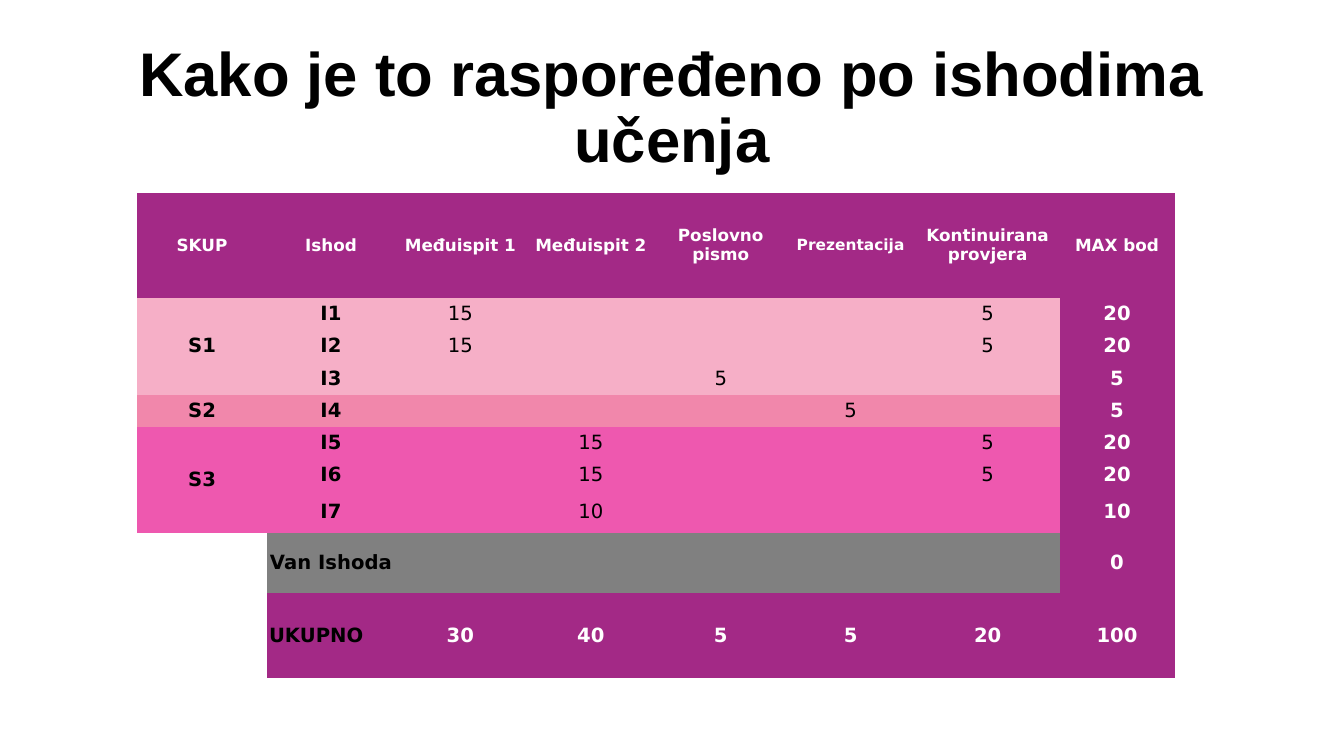
from dataclasses import dataclass

from lxml.etree import SubElement
from pptx import Presentation
from pptx.dml.color import RGBColor
from pptx.enum.text import MSO_ANCHOR as Anchor, PP_ALIGN as Align
from pptx.oxml.ns import qn
from pptx.util import Inches, Pt

NO_STYLE_NO_GRID = "{2D5ABB26-0587-4C30-8999-92F81FD0307C}"


@dataclass(frozen=True)
class Theme:
    title_font: str = "Arial"
    table_font: str = "DejaVu Sans"
    dark: str = "000000"
    light: str = "FFFFFF"
    purple: str = "A32986"
    gray: str = "808080"
    title_size: int = 44
    body_size: int = 14
    header_size: int = 12
    small_size: int = 11


HEADERS = ["SKUP", "Ishod", "Međuispit 1", "Međuispit 2", "Poslovno pismo",
           "Prezentacija", "Kontinuirana provjera", "MAX bod"]
# Each set: name, fill, and its outcomes with points per kind of assessment
OUTCOME_SETS = [
    ("S1", "F6AFC7", [("I1", [15, 0, 0, 0, 5]),
                      ("I2", [15, 0, 0, 0, 5]),
                      ("I3", [0, 0, 5, 0, 0])]),
    ("S2", "F187AB", [("I4", [0, 0, 0, 5, 0])]),
    ("S3", "EE58AF", [("I5", [0, 15, 0, 0, 5]),
                      ("I6", [0, 15, 0, 0, 5]),
                      ("I7", [0, 10, 0, 0, 0])]),
]
COLUMN_WEIGHTS = [1.29, 1.27, 1.3, 1.29, 1.29, 1.29, 1.43, 1.14]
ROW_WEIGHTS = [1.04] + [0.32] * 6 + [0.41, 0.6, 0.84]


def write(frame, text, *, font, size, color, bold=True, align=Align.CENTER,
          line_spacing=None):
    paragraph = frame.paragraphs[0]
    paragraph.alignment = align
    paragraph.line_spacing = line_spacing
    if not text:
        # An empty cell keeps its row low only with an explicit size
        SubElement(paragraph._p, qn("a:endParaRPr"), sz=str(size * 100))
        return
    run = paragraph.add_run()
    run.text = text
    run.font.name = font
    run.font.size = Pt(size)
    run.font.bold = bold
    run.font.color.rgb = RGBColor.from_string(color)


class SlideBuilder:
    """Places elements by shares of the slide's width and height."""

    def __init__(self, presentation, theme):
        self.theme = theme
        self.width = presentation.slide_width
        self.height = presentation.slide_height
        self.slide = presentation.slides.add_slide(presentation.slide_layouts[5])

    def box(self, left, top, width, height):
        return (round(left * self.width), round(top * self.height),
                round(width * self.width), round(height * self.height))

    def title(self, text, *place):
        shape = self.slide.shapes.title
        shape.left, shape.top, shape.width, shape.height = self.box(*place)
        shape.text_frame.word_wrap = True
        shape.text_frame.vertical_anchor = Anchor.MIDDLE
        write(shape.text_frame, text, font=self.theme.title_font,
              size=self.theme.title_size, color=self.theme.dark, line_spacing=0.9)

    def table(self, column_weights, row_weights, *place):
        left, top, width, height = self.box(*place)
        table = self.slide.shapes.add_table(
            len(row_weights), len(column_weights), left, top, width, height).table
        table.first_row = table.horz_banding = False
        table._tbl.tblPr.find(qn("a:tableStyleId")).text = NO_STYLE_NO_GRID
        for column, weight in zip(table.columns, column_weights):
            column.width = round(width * weight / sum(column_weights))
        for row, weight in zip(table.rows, row_weights):
            row.height = round(height * weight / sum(row_weights))
        return table

    def cell(self, cell, text, fill, **text_format):
        cell.fill.solid()
        cell.fill.fore_color.rgb = RGBColor.from_string(fill)
        cell.vertical_anchor = Anchor.MIDDLE
        cell.margin_left = cell.margin_right = Inches(0.02)
        cell.margin_top = cell.margin_bottom = Inches(0.02)
        defaults = {"font": self.theme.table_font, "size": self.theme.body_size,
                    "color": self.theme.dark}
        write(cell.text_frame, text, **(defaults | text_format))


def fill_points_table(builder, table):
    theme = builder.theme
    light = {"color": theme.light}

    for column, header in enumerate(HEADERS):
        size = theme.small_size if header == "Prezentacija" else theme.header_size
        builder.cell(table.cell(0, column), header, theme.purple, size=size, **light)

    row = 1
    for name, fill, outcomes in OUTCOME_SETS:
        first = row
        for outcome, points in outcomes:
            builder.cell(table.cell(row, 0), name if row == first else "", fill)
            builder.cell(table.cell(row, 1), outcome, fill)
            for column, value in enumerate(points, 2):
                builder.cell(table.cell(row, column), str(value or ""), fill, bold=False)
            builder.cell(table.cell(row, 7), str(sum(points)), theme.purple, **light)
            row += 1
        if len(outcomes) > 1:
            table.cell(first, 0).merge(table.cell(row - 1, 0))

    all_points = [points for _, _, outcomes in OUTCOME_SETS for _, points in outcomes]
    totals = [sum(values) for values in zip(*all_points)]
    closing_rows = [
        ("Van Ishoda", theme.gray, Align.CENTER, [""] * len(totals), 0),
        ("UKUPNO", theme.purple, Align.LEFT, totals, sum(totals)),
    ]
    for row, (label, fill, align, values, maximum) in enumerate(closing_rows, row):
        builder.cell(table.cell(row, 0), "", theme.light)
        builder.cell(table.cell(row, 1), label, fill, align=align)
        for column, value in enumerate(values, 2):
            builder.cell(table.cell(row, column), str(value), fill, **light)
        builder.cell(table.cell(row, 7), str(maximum), theme.purple, **light)


def main():
    presentation = Presentation()
    presentation.slide_width = Inches(13.33)
    presentation.slide_height = Inches(7.5)
    builder = SlideBuilder(presentation, Theme())
    builder.title("Kako je to raspoređeno po ishodima učenja",
                  0.07, 0.05, 0.86, 0.19)
    table = builder.table(COLUMN_WEIGHTS, ROW_WEIGHTS, 0.102, 0.255, 0.772, 0.642)
    fill_points_table(builder, table)
    presentation.save("out.pptx")


if __name__ == "__main__":
    main()
